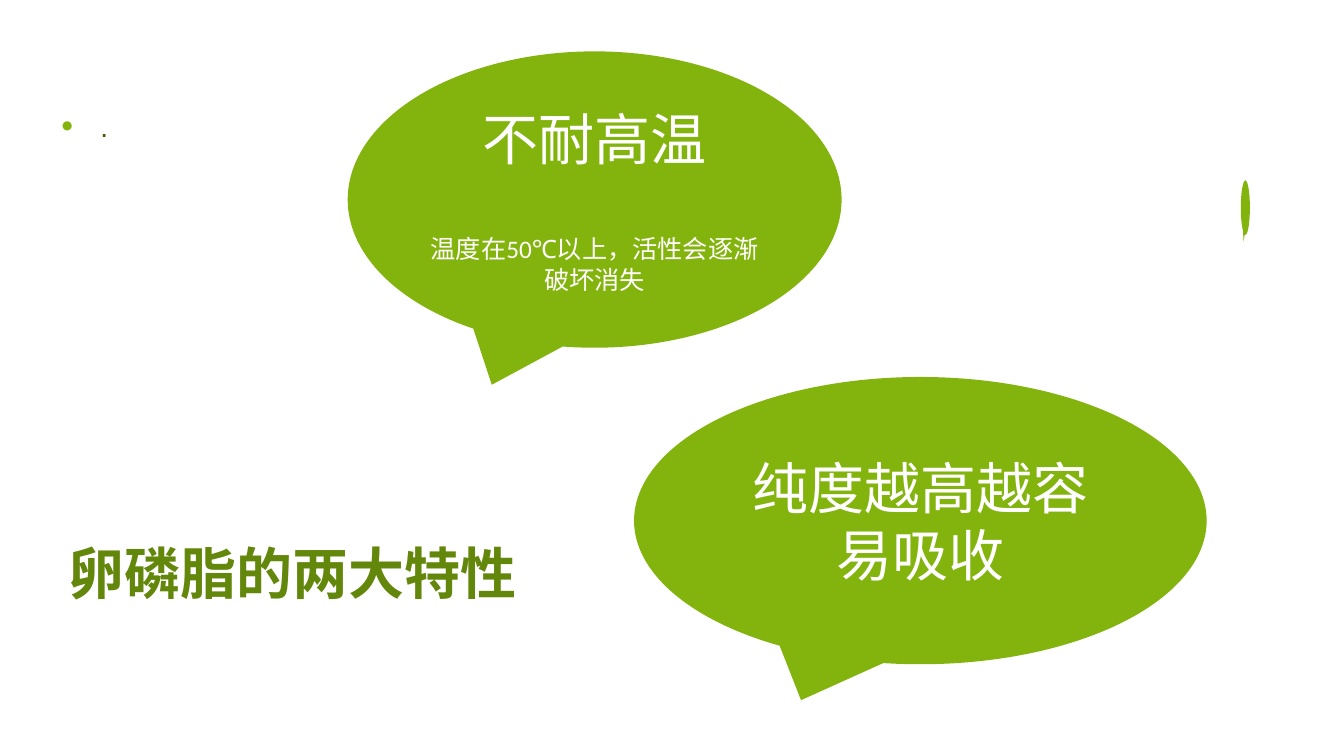
from lxml.etree import SubElement
from pptx import Presentation
from pptx.dml.color import RGBColor
from pptx.enum.shapes import MSO_SHAPE as Shape
from pptx.enum.text import MSO_ANCHOR as Anchor, PP_ALIGN as Align
from pptx.oxml.ns import qn
from pptx.util import Pt

GREEN = "83B40D"
WHITE = "FFFFFF"

HEADING = {"size": Pt(40), "name": "Calibri"}
DETAIL = {"size": Pt(18), "name": "Calibri"}
CENTRED = {"alignment": Align.CENTER}
CENTRED_APART = {"alignment": Align.CENTER, "space_before": Pt(44)}

TITLE = ("卵磷脂的两大特性", {"line_spacing": 0.9},
         {"size": Pt(40), "name": "Montserrat", "bold": True}, "62870A")
BULLET = (".", {"alignment": Align.JUSTIFY, "line_spacing": 1.1},
          {"size": Pt(20), "name": "Arial"}, "425A07")

CALLOUTS = [
    ((248.4, 36.7, 352.8, 211.7), [
        ("不耐高温", CENTRED, HEADING, WHITE),
        ("温度在50℃以上，活性会逐渐破坏消失", CENTRED_APART, DETAIL, WHITE),
    ]),
    ((886.3, 128.9, 6.5, 38.9), []),
    ((452.9, 269.3, 409, 205.2), [
        ("纯度越高越容易吸收", CENTRED, HEADING, WHITE),
    ]),
]


def colour(value):
    return RGBColor.from_string(value)


def apply(target, values):
    for name, value in values.items():
        setattr(target, name, value)


def write(para, line):
    text, layout, font, ink = line
    apply(para, layout)
    span = para.add_run()
    span.text = text
    apply(span.font, font)
    span.font.color.rgb = colour(ink)


def add_text(page, bounds, line, anchor):
    box = page.shapes.add_textbox(*map(Pt, bounds))
    apply(box.text_frame, {"word_wrap": True, "vertical_anchor": anchor})
    write(box.text_frame.paragraphs[0], line)
    return box.text_frame.paragraphs[0]


def add_bullet(para):
    properties = para._p.get_or_add_pPr()
    properties.set("marL", str(Pt(28)))
    properties.set("indent", str(Pt(-28)))
    tint = SubElement(properties, qn("a:buClr"))
    SubElement(tint, qn("a:srgbClr"), val=GREEN)
    SubElement(properties, qn("a:buSzPct"), val="120000")
    SubElement(properties, qn("a:buFont"), typeface="Arial")
    SubElement(properties, qn("a:buChar"), char="•")


def add_callout(page, bounds, lines):
    shape = page.shapes.add_shape(Shape.OVAL_CALLOUT, *map(Pt, bounds))
    shape.shadow.inherit = False
    shape.fill.solid()
    shape.fill.fore_color.rgb = colour(GREEN)
    shape.line.fill.background()
    frame = shape.text_frame
    apply(frame, {"word_wrap": True, "vertical_anchor": Anchor.MIDDLE})
    for index, line in enumerate(lines):
        write(frame.add_paragraph() if index else frame.paragraphs[0], line)


def main():
    deck = Presentation()
    apply(deck, {"slide_width": Pt(960), "slide_height": Pt(540)})
    page = deck.slides.add_slide(deck.slide_layouts[6])
    add_text(page, (41.8, 336.2, 370.8, 100.8), TITLE, Anchor.BOTTOM)
    add_bullet(add_text(page, (36.7, 72, 23.8, 283), BULLET, Anchor.TOP))
    for bounds, lines in CALLOUTS:
        add_callout(page, bounds, lines)
    deck.save("out.pptx")


if __name__ == "__main__":
    main()
